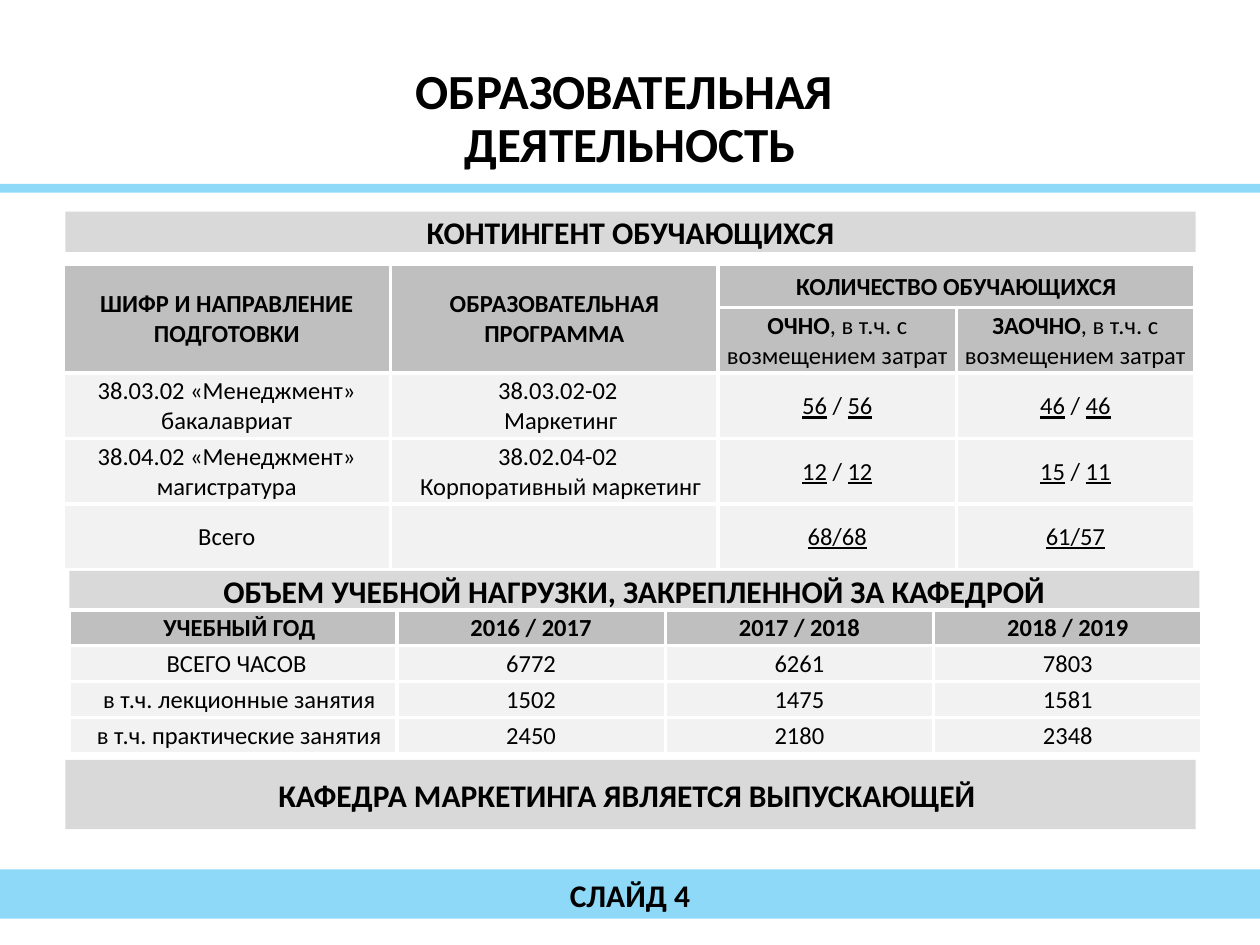
import pptx
import pptx.util
import pptx.dml.color
import pptx.enum.shapes
import pptx.enum.text
import pptx.oxml
import pptx.oxml.ns
from dataclasses import dataclass

Inches = pptx.util.Inches
Pt = pptx.util.Pt
RGB = pptx.dml.color.RGBColor.from_string


@dataclass(frozen=True)
class Theme:
    font: str = "Calibri"
    ink: str = "000000"
    sky: str = "8ED9F8"
    band: str = "D9D9D9"
    head: str = "BFBFBF"
    body: str = "F2F2F2"
    edge: str = "FFFFFF"
    title: int = 28
    bar: int = 18
    cell: int = 14
    rule: float = 2.25


THEME = Theme()
EDGE = (
    '<a:{tag} xmlns:a="http://schemas.openxmlformats.org/drawingml/2006/main" w="{width}">'
    '<a:solidFill><a:srgbClr val="{color}"/></a:solidFill></a:{tag}>'
)


def apply(item, style):
    for name, value in style.items():
        setattr(item, name, value)


def write(frame, lines, size):
    """Each line is a list of (text, style) runs; "\n" is a line break."""
    for i, runs in enumerate(lines):
        para = frame.paragraphs[0] if i == 0 else frame.add_paragraph()
        para.alignment = pptx.enum.text.PP_ALIGN.CENTER
        for text, style in runs:
            for j, part in enumerate(text.split("\n")):
                if j:
                    para.add_line_break()
                run = para.add_run()
                run.text = part
                apply(run.font, {"name": THEME.font, "size": Pt(size), **style})
                run.font.color.rgb = RGB(THEME.ink)


def bold(text):
    return [(text, {"bold": True})]


def plain(text):
    return [(text, {"bold": False})]


def under(text):
    return [(text, {"bold": False, "underline": True})]


def ratio(left, right):
    return under(left) + plain(" / ") + under(right)


# Bars and free text
def fill_frame(frame, lines, size):
    apply(frame, {"word_wrap": True,
                  "vertical_anchor": pptx.enum.text.MSO_ANCHOR.MIDDLE})
    write(frame, lines, size)


def add_bar(slide, box, color, text=None):
    bar = slide.shapes.add_shape(
        pptx.enum.shapes.MSO_SHAPE.RECTANGLE, *map(Inches, box))
    bar.shadow.inherit = False
    bar.fill.solid()
    bar.fill.fore_color.rgb = RGB(color)
    bar.line.fill.background()
    if text:
        fill_frame(bar.text_frame, [bold(text)], THEME.bar)


def add_label(slide, box, lines, size, space=None):
    frame = slide.shapes.add_textbox(*map(Inches, box)).text_frame
    fill_frame(frame, [bold(line) for line in lines], size)
    for para in frame.paragraphs:
        para.line_spacing = space


# Tables
def paint(cell, color):
    apply(cell, {
        "margin_left": Inches(0.01), "margin_right": Inches(0.01),
        "margin_top": Inches(0.01), "margin_bottom": 0,
        "vertical_anchor": pptx.enum.text.MSO_ANCHOR.MIDDLE})
    props = cell._tc.get_or_add_tcPr()
    for tag in ("lnL", "lnR", "lnT", "lnB"):
        props.append(pptx.oxml.parse_xml(EDGE.format(
            tag=tag, width=Pt(THEME.rule), color=THEME.edge)))
    cell.fill.solid()
    cell.fill.fore_color.rgb = RGB(color)


def add_grid(slide, box, cols, tall, rows, heads, inset, spans=()):
    """inset holds the (row, column) cells with a left indent."""
    table = slide.shapes.add_table(
        len(rows), len(cols), *map(Inches, box)).table
    for col, width in zip(table.columns, cols):
        col.width = Inches(width)
    for row, height in zip(table.rows, tall):
        row.height = Inches(height)
    for top, left, low, right in spans:
        table.cell(top, left).merge(table.cell(low, right))
    for r, row in enumerate(rows):
        for c, runs in enumerate(row):
            cell = table.cell(r, c)
            paint(cell, THEME.head if r < heads else THEME.body)
            if runs:
                write(cell.text_frame, [runs], THEME.cell)
            if (r, c) in inset:
                props = cell.text_frame.paragraphs[0]._p.get_or_add_pPr()
                props.set("marL", str(Inches(0.1)))


def add_roll(slide, box):
    note = plain(", в т.ч. с возмещением затрат")
    rows = [
        [bold("ШИФР И НАПРАВЛЕНИЕ ПОДГОТОВКИ"), bold("ОБРАЗОВАТЕЛЬНАЯ ПРОГРАММА"),
         bold("КОЛИЧЕСТВО ОБУЧАЮЩИХСЯ"), None],
        [None, None, bold("ОЧНО") + note, bold("ЗАОЧНО") + note],
        [plain("38.03.02 «Менеджмент» бакалавриат"),
         plain("38.03.02-02 \nМаркетинг"), ratio("56", "56"), ratio("46", "46")],
        [plain("38.04.02 «Менеджмент» магистратура"),
         plain("38.02.04-02 \nКорпоративный маркетинг"),
         ratio("12", "12"), ratio("15", "11")],
        [plain("Всего"), None, under("68/68"), under("61/57")],
    ]
    add_grid(slide, box, [2.6] * 2 + [1.89] * 2, [0.34] + [0.52] * 4, rows,
             heads=2, inset={(2, 1), (3, 1)},
             spans=[(0, 0, 1, 0), (0, 1, 1, 1), (0, 2, 0, 3)])


def add_load(slide, box):
    data = [
        ("ВСЕГО ЧАСОВ ", "6772", "6261", "7803"),
        ("в т.ч. лекционные занятия", "1502", "1475", "1581"),
        ("в т.ч. практические занятия", "2450", "2180", "2348"),
    ]
    years = ("УЧЕБНЫЙ ГОД", "2016 / 2017", "2017 / 2018", "2018 / 2019")
    rows = [list(map(bold, years))] + [list(map(plain, line)) for line in data]
    add_grid(slide, box, [2.6] + [2.13] * 3, [box[3] / len(rows)] * len(rows),
             rows, heads=1, inset={(r, 0) for r in range(len(rows))})


def main():
    deck = pptx.Presentation()
    apply(deck, {"slide_width": Inches(10), "slide_height": Inches(7.5)})
    slide = deck.slides.add_slide(deck.slide_layouts[6])

    # Footer and title
    add_bar(slide, (0, 6.9, 10, 0.39), THEME.sky)
    add_label(slide, (0, 6.9, 10, 0.4), ["СЛАЙД 4"], THEME.bar)
    add_label(slide, (0, 0.52, 10, 0.87),
              ["ОБРАЗОВАТЕЛЬНАЯ ", "ДЕЯТЕЛЬНОСТЬ"], THEME.title, 0.9)
    add_bar(slide, (0, 1.46, 10, 0.07), THEME.sky)

    # Students
    add_bar(slide, (0.52, 1.68, 8.97, 0.32), THEME.band, "КОНТИНГЕНТ ОБУЧАЮЩИХСЯ")
    add_roll(slide, (0.5, 2.1, 8.98, 2.41))

    # Teaching load
    add_bar(slide, (0.55, 4.53, 8.97, 0.32), THEME.band,
            "ОБЪЕМ УЧЕБНОЙ НАГРУЗКИ, ЗАКРЕПЛЕННОЙ ЗА КАФЕДРОЙ")
    add_load(slide, (0.55, 4.84, 8.98, 1.14))

    # Closing line
    add_bar(slide, (0.52, 6.03, 8.97, 0.55), THEME.band,
            "КАФЕДРА МАРКЕТИНГА ЯВЛЯЕТСЯ ВЫПУСКАЮЩЕЙ ")
    deck.save("out.pptx")


if __name__ == "__main__":
    main()
